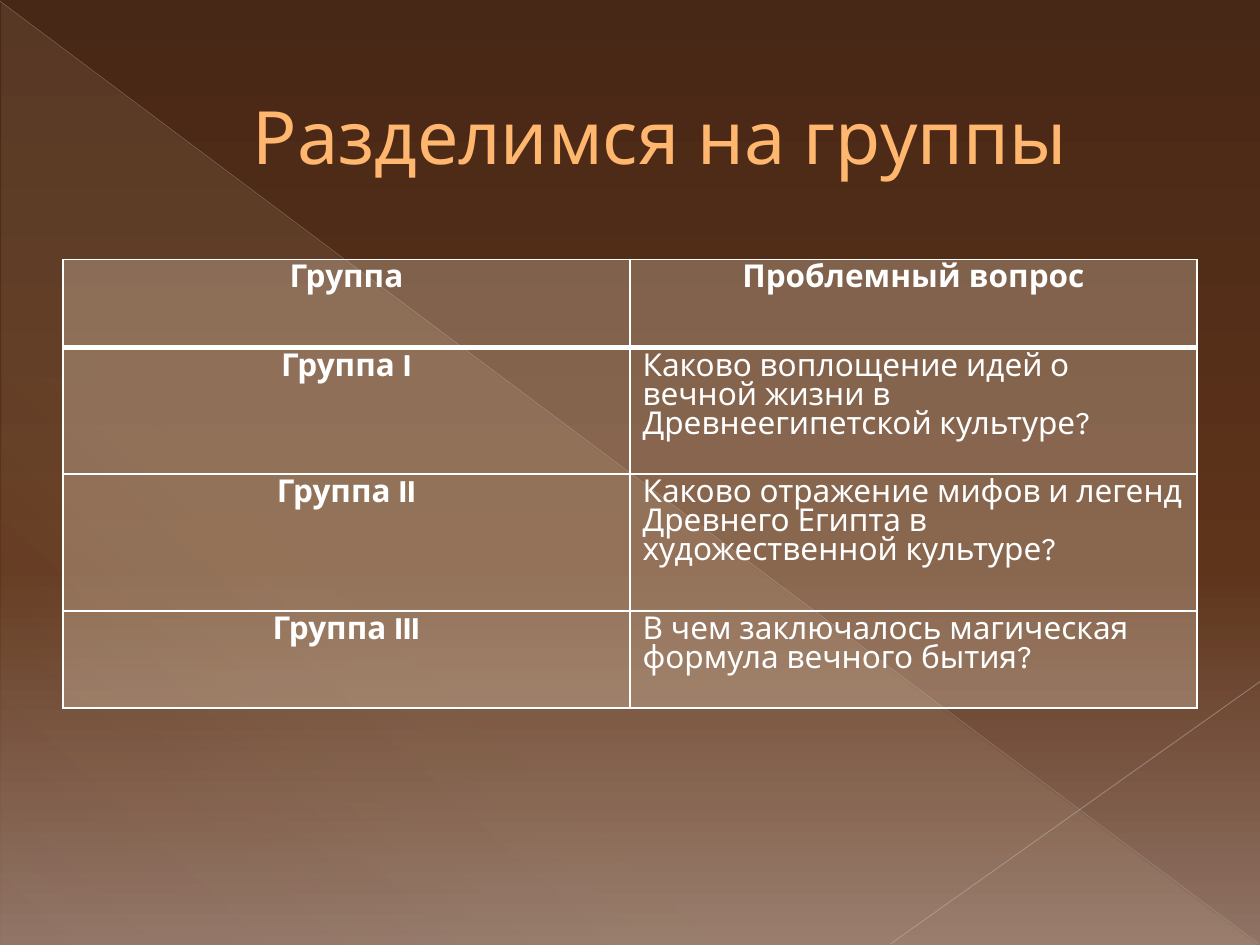
"""Build a slide that divides the class into groups with a table of questions."""
from dataclasses import dataclass

from lxml.etree import SubElement
from pptx import Presentation
from pptx.dml.color import RGBColor
from pptx.enum.shapes import MSO_CONNECTOR, MSO_SHAPE
from pptx.enum.text import MSO_ANCHOR, PP_ALIGN
from pptx.oxml.ns import qn
from pptx.util import Inches, Pt

TITLE = "Разделимся на группы"
ROWS = [
    ("Группа", "Проблемный вопрос"),
    ("Группа I", "Каково воплощение идей о вечной жизни в Древнеегипетской культуре?"),
    ("Группа II", "Каково отражение мифов и легенд Древнего Египта в художественной культуре?"),
    ("Группа III", "В чем заключалось магическая формула вечного бытия?"),
]
ROW_HEIGHTS = [0.7, 0.77, 1.09, 0.77]
WIDTH, HEIGHT, MARGIN = 10, 7.5, 0.5
TABLE_TOP = 2.06
TITLE_BOX = (0.47, 0.31, 9, 1.53)
TITLE_INDENT = 0.53
TRIANGLE_BOX = (0.01, 0.02, 9.98, 7.48)
DIAGONALS = [
    ((0, 0.01, 9.99, 7.49), "BCB7B4", 0.39, 35),
    ((10, 5.41, 7.07, 7.49), "C4BFBD", 0.47, 45),
]


@dataclass(frozen=True)
class Theme:
    font: str = "League Spartan"
    title_size: int = 42
    cell_size: int = 18
    title: str = "FFB66E"
    text: str = "FFFFFF"
    border: str = "FFFFFF"
    thin: int = 1
    thick: int = 3
    cell: str = "FCECD5"
    cell_opacity: int = 28
    background: tuple = ((0, "472715", 100), (60, "5E341B", 100), (100, "907365", 100))
    triangle: tuple = ((0, "FBEEC9", 10), (70, "FBEEC9", 8), (100, "FBEEC9", 1))


THEME = Theme()


def add_color(parent, color, opacity=100):
    node = SubElement(parent, qn("a:srgbClr"), val=color)
    if opacity < 100:
        SubElement(node, qn("a:alpha"), val=str(opacity * 1000))


def set_opacity(element, opacity):
    color = next(element.iter(qn("a:srgbClr")))
    SubElement(color, qn("a:alpha"), val=str(opacity * 1000))


def paint_gradient(fill, element, stops, angle):
    fill.gradient()
    gradient = next(element.iter(qn("a:gradFill")))
    for child in list(gradient):
        gradient.remove(child)
    stop_list = SubElement(gradient, qn("a:gsLst"))
    for position, color, opacity in stops:
        stop = SubElement(stop_list, qn("a:gs"), pos=str(position * 1000))
        add_color(stop, color, opacity)
    SubElement(gradient, qn("a:lin"), ang=str(angle * 60000), scaled="0")


def write(frame, text, size, color, bold=False, align=PP_ALIGN.LEFT):
    frame.text = text
    para = frame.paragraphs[0]
    para.alignment = align
    font = para.runs[0].font
    font.name, font.size, font.bold = THEME.font, Pt(size), bold
    font.color.rgb = RGBColor.from_string(color)
    return para


def add_diagonal(page, ends, color, weight, opacity):
    line = page.shapes.add_connector(MSO_CONNECTOR.STRAIGHT, *map(Inches, ends))
    line.line.width = Pt(weight)
    line.line.color.rgb = RGBColor.from_string(color)
    properties = line.element.spPr
    set_opacity(properties, opacity)
    SubElement(properties, qn("a:effectLst"))


def add_decoration(page):
    paint_gradient(page.background.fill, page.element, THEME.background, 90)
    triangle = page.shapes.add_shape(MSO_SHAPE.RIGHT_TRIANGLE, *map(Inches, TRIANGLE_BOX))
    triangle.shadow.inherit = False
    triangle.line.fill.background()
    paint_gradient(triangle.fill, triangle.element, THEME.triangle, 133)
    for diagonal in DIAGONALS:
        add_diagonal(page, *diagonal)


def add_title(page):
    frame = page.shapes.add_textbox(*map(Inches, TITLE_BOX)).text_frame
    frame.word_wrap = True
    frame.vertical_anchor = MSO_ANCHOR.MIDDLE
    para = write(frame, TITLE, THEME.title_size, THEME.title, align=PP_ALIGN.CENTER)
    para._p.get_or_add_pPr().set("marL", str(Inches(TITLE_INDENT)))


def style_cell(cell, row):
    cell.fill.solid()
    cell.fill.fore_color.rgb = RGBColor.from_string(THEME.cell)
    properties = cell._tc.get_or_add_tcPr()
    set_opacity(properties, THEME.cell_opacity)
    weights = {
        "L": THEME.thin,
        "R": THEME.thin,
        "T": THEME.thick if row == 1 else THEME.thin,
        "B": THEME.thick if row == 0 else THEME.thin,
    }
    for order, (side, weight) in enumerate(weights.items()):
        border = SubElement(properties, qn(f"a:ln{side}"), w=str(Pt(weight)))
        add_color(SubElement(border, qn("a:solidFill")), THEME.border)
        properties.insert(order, border)


def add_groups(page):
    columns = len(ROWS[0])
    table = page.shapes.add_table(
        len(ROWS), columns, Inches(MARGIN), Inches(TABLE_TOP),
        Inches(WIDTH - 2 * MARGIN), Inches(sum(ROW_HEIGHTS)),
    ).table
    table.first_row = table.horz_banding = False
    for row, (texts, height) in enumerate(zip(ROWS, ROW_HEIGHTS)):
        table.rows[row].height = Inches(height)
        for column, text in enumerate(texts):
            cell = table.cell(row, column)
            heading = row == 0 or column == 0
            align = PP_ALIGN.CENTER if heading else PP_ALIGN.LEFT
            write(cell.text_frame, text, THEME.cell_size, THEME.text, heading, align)
            style_cell(cell, row)


def main():
    deck = Presentation()
    deck.slide_width, deck.slide_height = Inches(WIDTH), Inches(HEIGHT)
    page = deck.slides.add_slide(deck.slide_layouts[6])
    add_decoration(page)
    add_title(page)
    add_groups(page)
    deck.save("out.pptx")


if __name__ == "__main__":
    main()
